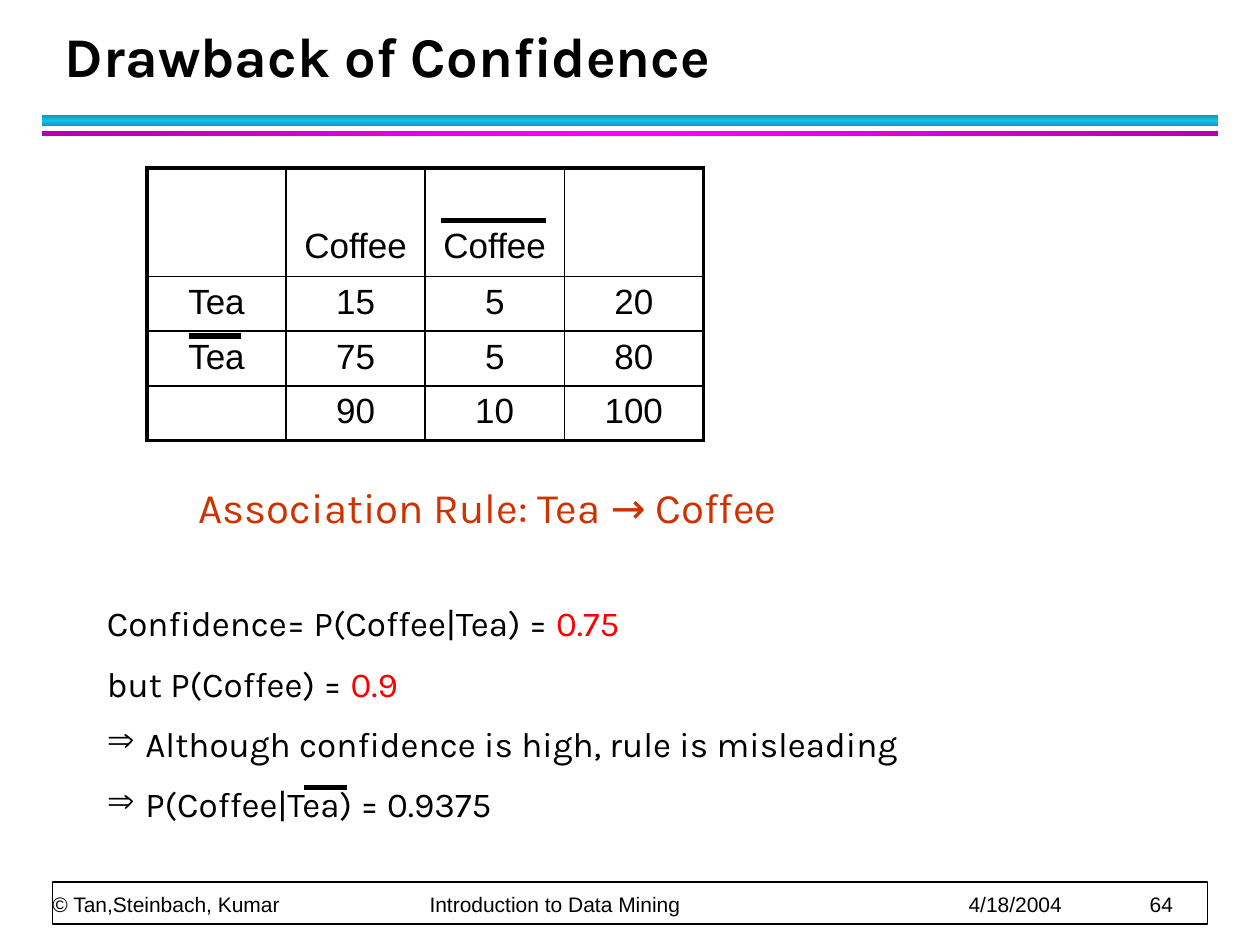
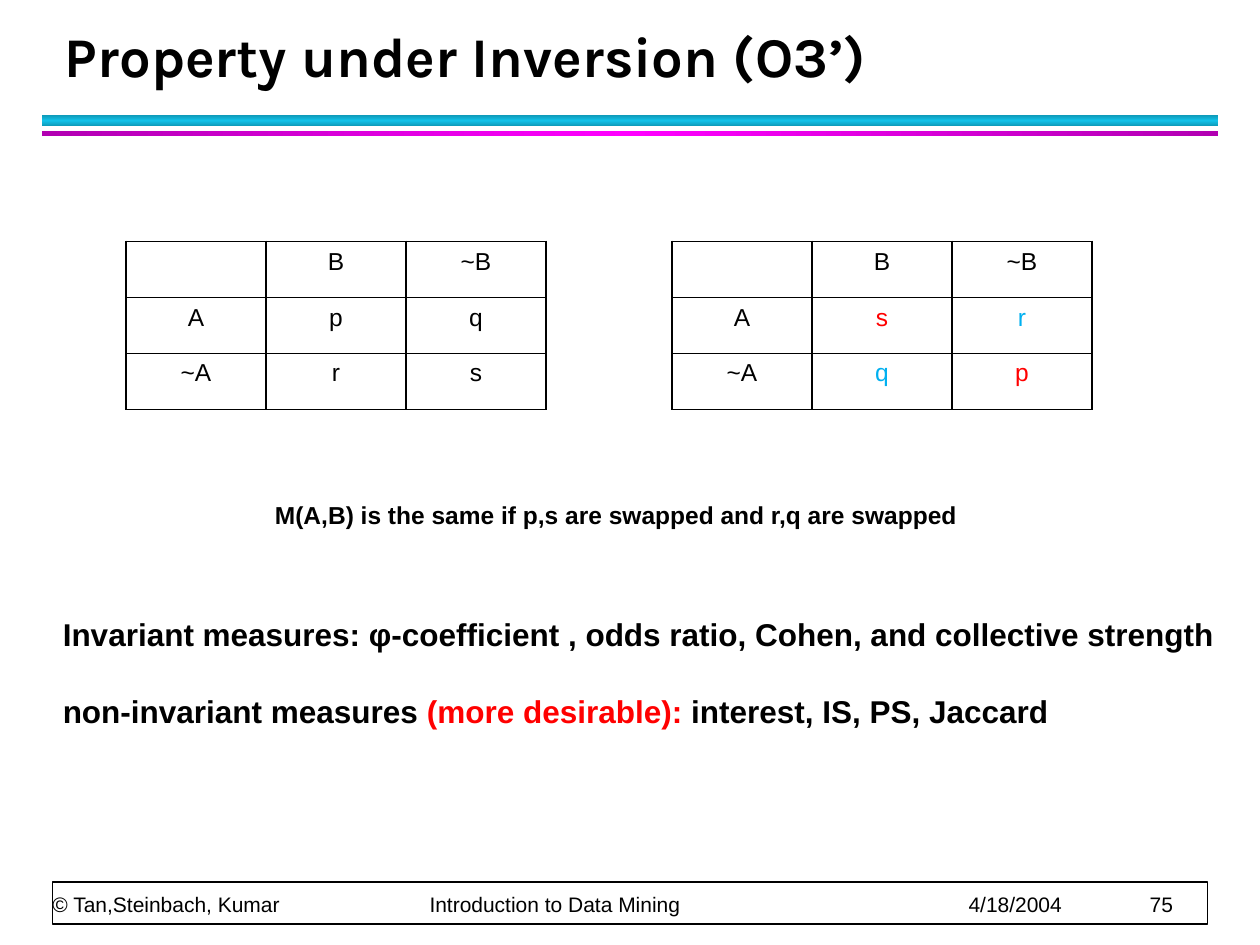
"""Build two data mining slides on the limits of confidence and inversion of measures."""
from copy import deepcopy
from dataclasses import dataclass

from lxml.etree import SubElement
from pptx import Presentation
from pptx.dml.color import RGBColor
from pptx.enum.shapes import MSO_CONNECTOR, MSO_SHAPE
from pptx.enum.text import MSO_ANCHOR, MSO_AUTO_SIZE, PP_ALIGN
from pptx.oxml import parse_xml
from pptx.oxml.ns import nsdecls, qn
from pptx.util import Pt


@dataclass(frozen=True)
class Theme:
    display: str = "Karla"
    plain: str = "Arial"
    black: str = "000000"
    white: str = "FFFFFF"
    red: str = "FF0000"
    rust: str = "CC3300"
    blue: str = "00B0F0"
    cyan_band: tuple = ("0E9BBA", "12C2E9", "0E9BBA")
    pink_band: tuple = ("B200B2", "FF00FF", "B200B2")
    title: int = 32
    rule: int = 24
    body: int = 20
    measure: int = 18
    small: int = 14
    footer: int = 12


T = Theme()

BANDS = [((24, 66, 672, 6), T.cyan_band, 90), ((24, 75, 672, 3), T.pink_band, 0)]
FOOTER = ["© Tan,Steinbach, Kumar", "Introduction to Data Mining", "4/18/2004"]
FOOTER_TABS = [215.5, 523.5, 627]

SLIDES = [
    dict(
        title="Drawback of Confidence",
        number=64,
        tables=[dict(
            at=(84, 96), col=79.5, rows=[62, 31, 31, 31], size=T.body, outer=2.25,
            head_anchor=MSO_ANCHOR.BOTTOM,
            cells=[["", "Coffee", "Coffee", ""], ["Tea", "15", "5", "20"],
                   ["Tea", "75", "5", "80"], ["", "90", "10", "100"]],
        )],
        texts=[dict(
            box=(54, 271.5, 582, 209), font=T.display, size=T.body, bold=False, wrap=True,
            paras=[
                dict(runs=[("Association Rule: Tea → Coffee", T.rust)], size=T.rule, left=52.5),
                dict(runs=[("Confidence= P(Coffee|Tea) = ", T.black), ("0.75", T.red)], before=40),
                dict(runs=[("but P(Coffee) = ", T.black), ("0.9", T.red)], before=10.5),
                dict(runs=[("Although confidence is high, rule is misleading", T.black)],
                     before=10.5, bullet="⇒"),
                dict(runs=[("P(Coffee|Tea) = 0.9375", T.black)], before=10.5, bullet="⇒"),
            ],
        )],
        overbars=[(252, 312, 126), (108, 138, 192), (174, 198, 450)],
    ),
    dict(
        title="Property under Inversion (O3’)",
        number=75,
        tables=[
            dict(at=(left, 138), col=80, rows=[32] * 3, size=T.small, outer=1,
                 head_anchor=MSO_ANCHOR.TOP,
                 cells=[["", "B", "~B"], ["A", *upper], ["~A", *lower]])
            for left, upper, lower in [
                (72, ["p", "q"], ["r", "s"]),
                (384, [("s", T.red), ("r", T.blue)], [("q", T.blue), ("p", T.red)]),
            ]
        ],
        texts=[
            dict(box=(28.8, 348, 675.4, 73), font=T.plain, size=T.measure, bold=True, wrap=False,
                 paras=[
                     dict(runs=[("Invariant measures: φ-coefficient , odds ratio, Cohen, "
                                 "and collective strength", T.black)]),
                     dict(runs=[("non-invariant measures ", T.black),
                                ("(more desirable): ", T.red),
                                ("interest, IS, PS, Jaccard", T.black)], before=22),
                 ]),
            dict(box=(150, 282, 406, 24.5), font=T.plain, size=T.small, bold=True, wrap=False,
                 paras=[dict(runs=[("M(A,B) is the same if p,s are swapped "
                                    "and r,q are swapped", T.black)])]),
        ],
        overbars=[],
    ),
]


def pts(values):
    return [Pt(v) for v in values]


def add_run(p, text, font, size, color=T.black, bold=False):
    r = p.add_run()
    r.text = text
    r.font.name, r.font.size, r.font.bold = font, Pt(size), bold
    r.font.color.rgb = RGBColor.from_string(color)


def add_rect(s, box):
    sp = s.shapes.add_shape(MSO_SHAPE.RECTANGLE, *pts(box))
    sp.shadow.inherit = False
    return sp


def add_band(s, box, colors, angle):
    sp = add_rect(s, box)
    sp.line.fill.background()
    sp.fill.gradient()
    sp.fill.gradient_angle = angle
    stops = sp.element.find(".//" + qn("a:gsLst"))
    stops.append(deepcopy(stops[0]))
    for i, (stop, color) in enumerate(zip(sp.fill.gradient_stops, colors)):
        stop.position = i / (len(colors) - 1)
        stop.color.rgb = RGBColor.from_string(color)


def add_line_text(s, box, text, font, size, spacing, bold=False, inset=None):
    tf = s.shapes.add_textbox(*pts(box)).text_frame
    tf.word_wrap = True
    tf.vertical_anchor = MSO_ANCHOR.BOTTOM
    if inset is not None:
        tf.margin_left = tf.margin_top = tf.margin_right = tf.margin_bottom = Pt(inset)
    p = tf.paragraphs[0]
    p.line_spacing = Pt(spacing)
    add_run(p, text, font, size, bold=bold)
    return p


def add_frame(s, title, number):
    for band in BANDS:
        add_band(s, *band)
    sp = add_rect(s, (30, 504, 660, 24))
    sp.fill.solid()
    sp.fill.fore_color.rgb = RGBColor.from_string(T.white)
    sp.line.color.rgb = RGBColor.from_string(T.black)
    sp.line.width = Pt(1)
    p = add_line_text(s, (30, 504, 659, 20), "\t".join([*FOOTER, str(number)]),
                      T.plain, T.footer, 20, inset=0)
    tabs = SubElement(p._p.get_or_add_pPr(), qn("a:tabLst"))
    for pos in FOOTER_TABS:
        SubElement(tabs, qn("a:tab"), pos=str(Pt(pos)), algn="l")
    add_line_text(s, (30, 12, 652, 42), title, T.display, T.title, 36, bold=True)


def add_text(s, box, font, size, bold, wrap, paras):
    tf = s.shapes.add_textbox(*pts(box)).text_frame
    tf.word_wrap = wrap
    tf.auto_size = MSO_AUTO_SIZE.SHAPE_TO_FIT_TEXT
    for i, para in enumerate(paras):
        p = tf.add_paragraph() if i else tf.paragraphs[0]
        p.space_before = Pt(para.get("before", 0))
        pPr = p._p.get_or_add_pPr()
        if "left" in para:
            pPr.set("marL", str(Pt(para["left"])))
        if "bullet" in para:
            pPr.set("marL", str(Pt(22)))
            pPr.set("indent", str(-Pt(22)))
            SubElement(pPr, qn("a:buChar"), char=para["bullet"])
        for text, color in para["runs"]:
            add_run(p, text, font, para.get("size", size), color, bold)


def set_borders(cell, widths):
    tcPr = cell._tc.get_or_add_tcPr()
    for i, (side, width) in enumerate(zip("LRTB", widths)):
        tcPr.insert(i, parse_xml(
            f'<a:ln{side} {nsdecls("a")} w="{Pt(width)}"><a:solidFill>'
            f'<a:srgbClr val="{T.black}"/></a:solidFill></a:ln{side}>'))


def add_grid(s, at, col, rows, size, outer, head_anchor, cells):
    n_rows, n_cols = len(rows), len(cells[0])
    tbl = s.shapes.add_table(n_rows, n_cols, *pts((*at, col * n_cols, sum(rows)))).table
    tbl.first_row = tbl.horz_banding = False
    for column in tbl.columns:
        column.width = Pt(col)
    for i, height in enumerate(rows):
        tbl.rows[i].height = Pt(height)
        for j, value in enumerate(cells[i]):
            cell = tbl.cell(i, j)
            cell.fill.background()
            edges = (j == 0, j == n_cols - 1, i == 0, i == n_rows - 1)
            set_borders(cell, [outer if edge else 1 for edge in edges])
            if i == 0:
                cell.vertical_anchor = head_anchor
                cell.margin_bottom = Pt(6)
            text, color = value if isinstance(value, tuple) else (value, T.black)
            if text:
                p = cell.text_frame.paragraphs[0]
                p.alignment = PP_ALIGN.CENTER
                add_run(p, text, T.plain, size, color)


def add_overbar(s, x1, x2, y):
    bar = s.shapes.add_connector(MSO_CONNECTOR.STRAIGHT, *pts((x1, y, x2, y)))
    bar.line.color.rgb = RGBColor.from_string(T.black)
    bar.line.width = Pt(3)
    SubElement(bar.element.spPr, qn("a:effectLst"))


def main():
    prs = Presentation()
    prs.slide_width, prs.slide_height = Pt(720), Pt(540)
    for content in SLIDES:
        s = prs.slides.add_slide(prs.slide_layouts[6])
        add_frame(s, content["title"], content["number"])
        for table in content["tables"]:
            add_grid(s, **table)
        for text in content["texts"]:
            add_text(s, **text)
        for bar in content["overbars"]:
            add_overbar(s, *bar)
    prs.save("out.pptx")


if __name__ == "__main__":
    main()
